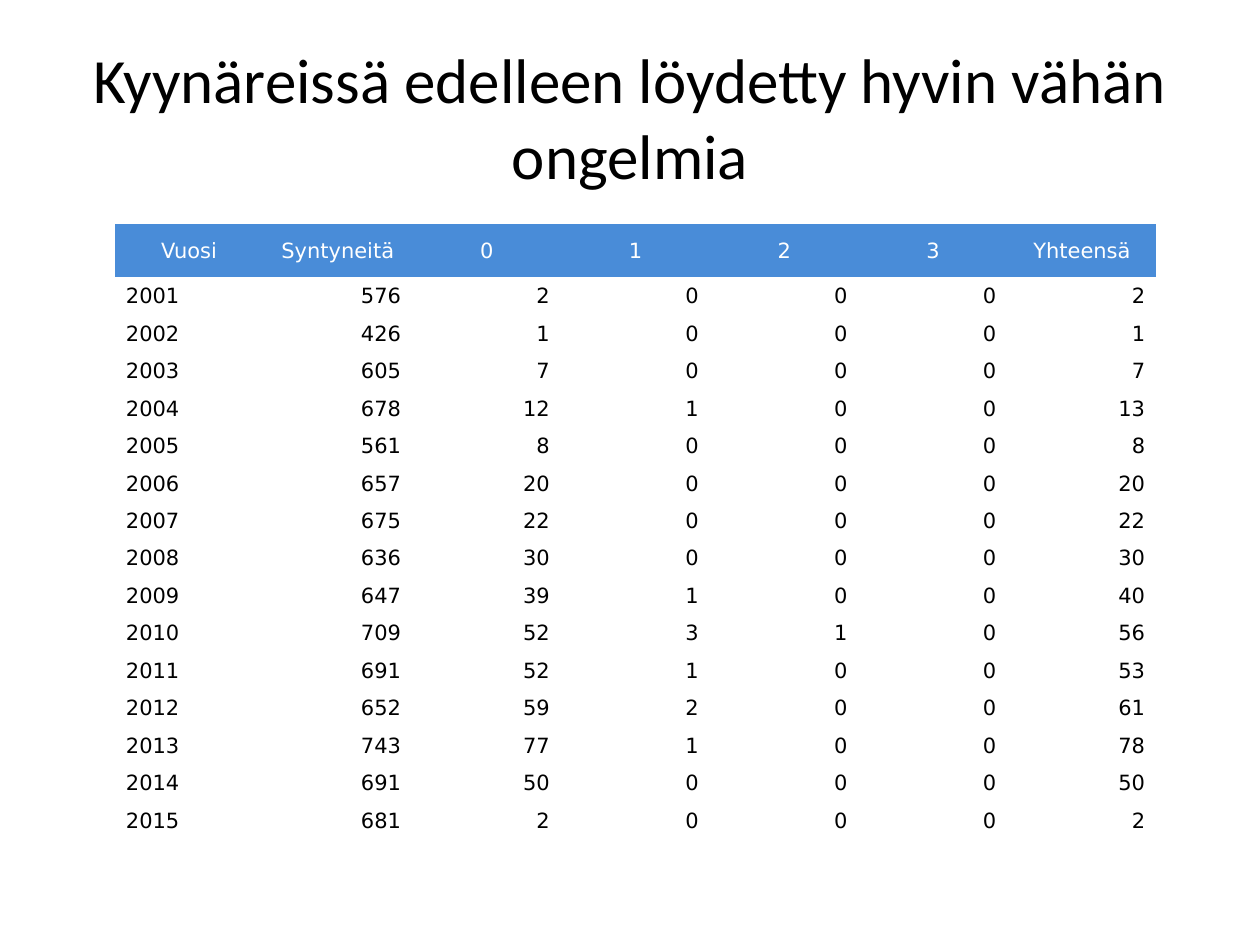
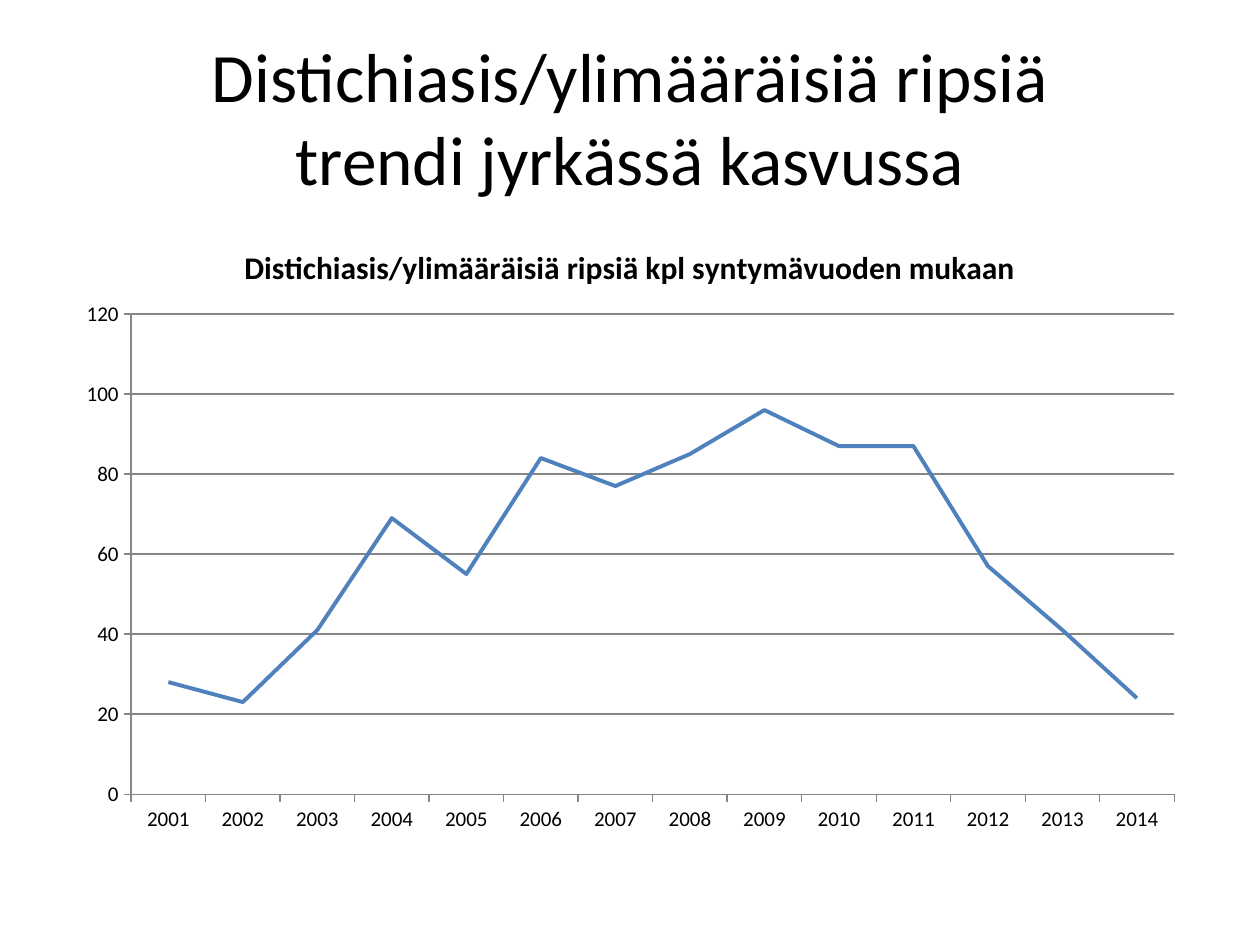
from dataclasses import dataclass

from lxml import etree
from pptx import Presentation
from pptx.chart.data import CategoryChartData
from pptx.dml.color import RGBColor as RGB
from pptx.enum.chart import XL_CHART_TYPE as CT, XL_MARKER_STYLE as MARKER, XL_TICK_MARK as TICK
from pptx.enum.text import MSO_ANCHOR as ANCHOR, MSO_AUTO_SIZE as AUTO, PP_ALIGN as AL
from pptx.oxml.ns import qn
from pptx.util import Inches, Pt

# Content
ELBOW_TITLE = "Kyynäreissä edelleen löydetty hyvin vähän ongelmia"
ELBOW_HEADER = ["Vuosi", "Syntyneitä", "0", "1", "2", "3", "Yhteensä"]
ELBOW_ROWS = [  # year, born, grades 0 to 3, total
    (2001, 576, 2, 0, 0, 0, 2),
    (2002, 426, 1, 0, 0, 0, 1),
    (2003, 605, 7, 0, 0, 0, 7),
    (2004, 678, 12, 1, 0, 0, 13),
    (2005, 561, 8, 0, 0, 0, 8),
    (2006, 657, 20, 0, 0, 0, 20),
    (2007, 675, 22, 0, 0, 0, 22),
    (2008, 636, 30, 0, 0, 0, 30),
    (2009, 647, 39, 1, 0, 0, 40),
    (2010, 709, 52, 3, 1, 0, 56),
    (2011, 691, 52, 1, 0, 0, 53),
    (2012, 652, 59, 2, 0, 0, 61),
    (2013, 743, 77, 1, 0, 0, 78),
    (2014, 691, 50, 0, 0, 0, 50),
    (2015, 681, 2, 0, 0, 0, 2),
]
LASH_TITLE = "Distichiasis/ylimääräisiä ripsiä\vtrendi jyrkässä kasvussa"
LASH_CHART_TITLE = "Distichiasis/ylimääräisiä ripsiä kpl syntymävuoden mukaan"
LASH_FIRST_YEAR = 2001
LASH_COUNTS = [28, 23, 41, 69, 55, 84, 77, 85, 96, 87, 87, 57, 41, 24]


@dataclass(frozen=True)
class Theme:
    font: str = "Calibri"
    table_font: str = "DejaVu Sans"
    black: RGB = RGB(0, 0, 0)
    white: RGB = RGB(255, 255, 255)
    header: RGB = RGB(0x49, 0x8C, 0xD8)
    line: RGB = RGB(0x4F, 0x81, 0xBD)
    grid: RGB = RGB(0x86, 0x86, 0x86)
    chart_title: float = 18
    small: float = 12


T = Theme()
TITLE_BOX = (0.5, 0.3, 9, 1.25)
TABLE_BOX = (0.91, 1.78, 8.27, 4.88)
CHART_BOX = (0.5, 1.75, 9, 4.95)
HEADER_HEIGHT = 0.42
PLOT = {"x": 0.06, "y": 0.15, "w": 0.92, "h": 0.77}  # shares of the chart box
NO_STYLE = "{2D5ABB26-0587-4C30-8999-92F81FD0307C}"


def box(dims):
    return [Inches(v) for v in dims]


def style(font, size, color=T.black, name=T.font, bold=False):
    font.size, font.name, font.bold = Pt(size), name, bold
    font.color.rgb = color


def add_slide(prs, title, size):
    s = prs.slides.add_slide(prs.slide_layouts[5])
    sp = s.shapes.title
    sp.left, sp.top, sp.width, sp.height = box(TITLE_BOX)
    tf = sp.text_frame
    tf.text = title
    tf.word_wrap, tf.auto_size, tf.vertical_anchor = True, AUTO.NONE, ANCHOR.MIDDLE
    p = tf.paragraphs[0]
    p.alignment = AL.CENTER
    for r in p.runs:
        style(r.font, size)
    return s


def fill_cell(cell, value, align, color, fill):
    cell.fill.solid()
    cell.fill.fore_color.rgb = fill
    cell.vertical_anchor = ANCHOR.MIDDLE
    cell.margin_left = Inches(0.09 if align == AL.LEFT else 0.01)
    cell.margin_right = Inches(0.09 if align == AL.RIGHT else 0.01)
    cell.margin_top, cell.margin_bottom = Inches(0.01), 0
    p = cell.text_frame.paragraphs[0]
    p.text = str(value)
    p.alignment = align
    style(p.runs[0].font, T.small, color, T.table_font)


def add_elbow_table(s):
    rows = [ELBOW_HEADER, *ELBOW_ROWS]
    frame = s.shapes.add_table(len(rows), len(ELBOW_HEADER), *box(TABLE_BOX))
    table = frame.table
    table.first_row = table.horz_banding = False
    table._tbl.tblPr.find(qn("a:tableStyleId")).text = NO_STYLE
    body_height = (TABLE_BOX[3] - HEADER_HEIGHT) / len(ELBOW_ROWS)
    for i, row in enumerate(rows):
        table.rows[i].height = Inches(body_height if i else HEADER_HEIGHT)
        for j, value in enumerate(row):
            if i == 0:
                look = (AL.CENTER, T.white, T.header)
            else:
                look = (AL.RIGHT if j else AL.LEFT, T.black, T.white)
            fill_cell(table.cell(i, j), value, *look)


def place_plot(chart):
    area = chart._chartSpace.chart.plotArea
    for old in area.findall(qn("c:layout")):
        area.remove(old)
    layout = etree.Element(qn("c:layout"))
    area.insert(0, layout)
    manual = etree.SubElement(layout, qn("c:manualLayout"))
    settings = {"layoutTarget": "inner", "xMode": "edge", "yMode": "edge", **PLOT}
    for tag, val in settings.items():
        etree.SubElement(manual, qn(f"c:{tag}")).set("val", str(val))


def add_lash_chart(s):
    data = CategoryChartData()
    data.categories = [str(LASH_FIRST_YEAR + i) for i in range(len(LASH_COUNTS))]
    data.add_series("Series 1", LASH_COUNTS)
    chart = s.shapes.add_chart(CT.LINE, *box(CHART_BOX), data).chart
    style(chart.font, T.small)
    chart.has_legend = False

    # Heading
    chart.has_title = True
    p = chart.chart_title.text_frame.paragraphs[0]
    p.text = LASH_CHART_TITLE
    style(p.runs[0].font, T.chart_title, bold=True)
    chart.chart_title.include_in_layout = False

    # Axes and gridlines
    value_axis = chart.value_axis
    value_axis.minimum_scale, value_axis.maximum_scale, value_axis.major_unit = 0, 120, 20
    value_axis.has_major_gridlines = True
    chart.category_axis.has_major_gridlines = False
    for axis in (chart.category_axis, value_axis):
        axis.major_tick_mark = TICK.OUTSIDE
        style(axis.tick_labels.font, T.small)
    for item in (chart.category_axis, value_axis, value_axis.major_gridlines):
        item.format.line.color.rgb = T.grid
        item.format.line.width = Pt(0.75)

    # Series
    chart.plots[0].vary_by_categories = False
    series = chart.plots[0].series[0]
    series.smooth = False
    series.marker.style = MARKER.NONE
    series.format.line.color.rgb = T.line
    series.format.line.width = Pt(2.25)
    place_plot(chart)


def main():
    prs = Presentation()
    prs.slide_width, prs.slide_height = Inches(10), Inches(7.5)
    add_elbow_table(add_slide(prs, ELBOW_TITLE, 36))
    add_lash_chart(add_slide(prs, LASH_TITLE, 39.6))
    prs.save("out.pptx")


if __name__ == "__main__":
    main()
